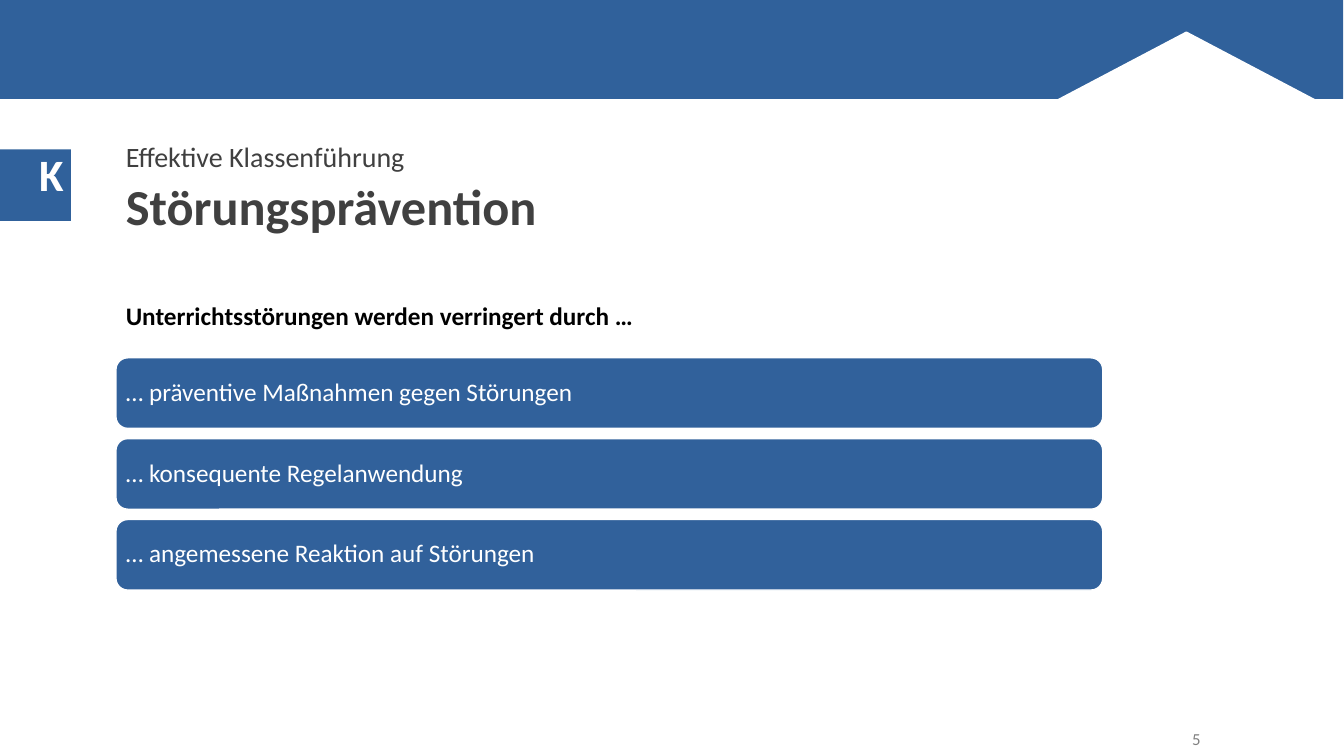
from pptx import Presentation
from pptx.dml.color import RGBColor
from pptx.enum.shapes import MSO_SHAPE as Shape
from pptx.enum.text import MSO_ANCHOR as Anchor, PP_ALIGN as Align
from pptx.util import Pt

COLOURS = {
    "band": "30619B",
    "bar": "31619B",
    "white": "FFFFFF",
    "title": "404040",
    "black": "000000",
    "number": "808080",
}
MEASURES = [
    "… präventive Maßnahmen gegen Störungen",
    "… konsequente Regelanwendung",
    "… angemessene Reaktion auf Störungen",
]
LEFT = 82.8
BAR_TOP, BAR_HEIGHT, BAR_STEP = 255.6, 50.4, 57.75


def colour(name):
    return RGBColor.from_string(COLOURS[name])


def write(shape, text, size, ink, bold=False, anchor=Anchor.TOP,
          align=Align.LEFT, spacing=0.9):
    frame = shape.text_frame
    frame.word_wrap = True
    frame.vertical_anchor = anchor
    para = frame.paragraphs[0]
    para.text = text
    para.alignment = align
    para.line_spacing = spacing
    para.font.name = "Calibri"
    para.font.size = Pt(size)
    para.font.bold = bold
    para.font.color.rgb = colour(ink)


def add_block(page, kind, place, fill, outline=None):
    block = page.shapes.add_shape(kind, *map(Pt, place))
    block.shadow.inherit = False
    block.fill.solid()
    block.fill.fore_color.rgb = colour(fill)
    if outline:
        block.line.color.rgb = colour(outline)
        block.line.width = Pt(1)
    else:
        block.line.fill.background()
    return block


def add_label(page, place, text, size, ink, **style):
    box = page.shapes.add_textbox(*map(Pt, place))
    write(box, text, size, ink, **style)


def add_measure(page, top, text):
    bar = add_block(page, Shape.ROUNDED_RECTANGLE,
                    (LEFT, top, 704.9, BAR_HEIGHT), "bar", "white")
    write(bar, text, 18, "white", anchor=Anchor.MIDDLE)
    bar.text_frame.margin_left = Pt(4.75)


def add_header(page):
    add_block(page, Shape.RECTANGLE, (-0.5, 0, 960, 70.6), "band")
    add_block(page, Shape.ISOSCELES_TRIANGLE, (687.6, 23, 319.7, 84.2), "white", "white")
    add_block(page, Shape.RECTANGLE, (-0.5, 106.6, 51.1, 51.1), "band")
    add_label(page, (20.9, 101.5, 25.9, 46.1), "K", 32, "white", bold=True, spacing=1.0)


def main():
    deck = Presentation()
    deck.slide_width, deck.slide_height = Pt(960), Pt(540)
    page = deck.slides.add_slide(deck.slide_layouts[6])
    add_header(page)
    add_label(page, (LEFT, 124.6, 715.7, 47.5), "Störungsprävention", 36, "title",
              bold=True, anchor=Anchor.BOTTOM)
    add_label(page, (LEFT, 213.1, 739.4, 290.2),
              "Unterrichtsstörungen werden verringert durch …", 18, "black", bold=True)
    add_label(page, (LEFT, 87.8, 715.7, 39.6), "Effektive Klassenführung", 20, "title",
              anchor=Anchor.BOTTOM)
    add_label(page, (648.7, 516.2, 216, 23.8), "5", 12, "number",
              anchor=Anchor.MIDDLE, align=Align.RIGHT, spacing=1.0)
    for index, text in enumerate(MEASURES):
        add_measure(page, BAR_TOP + index * BAR_STEP, text)
    deck.save("out.pptx")


if __name__ == "__main__":
    main()
